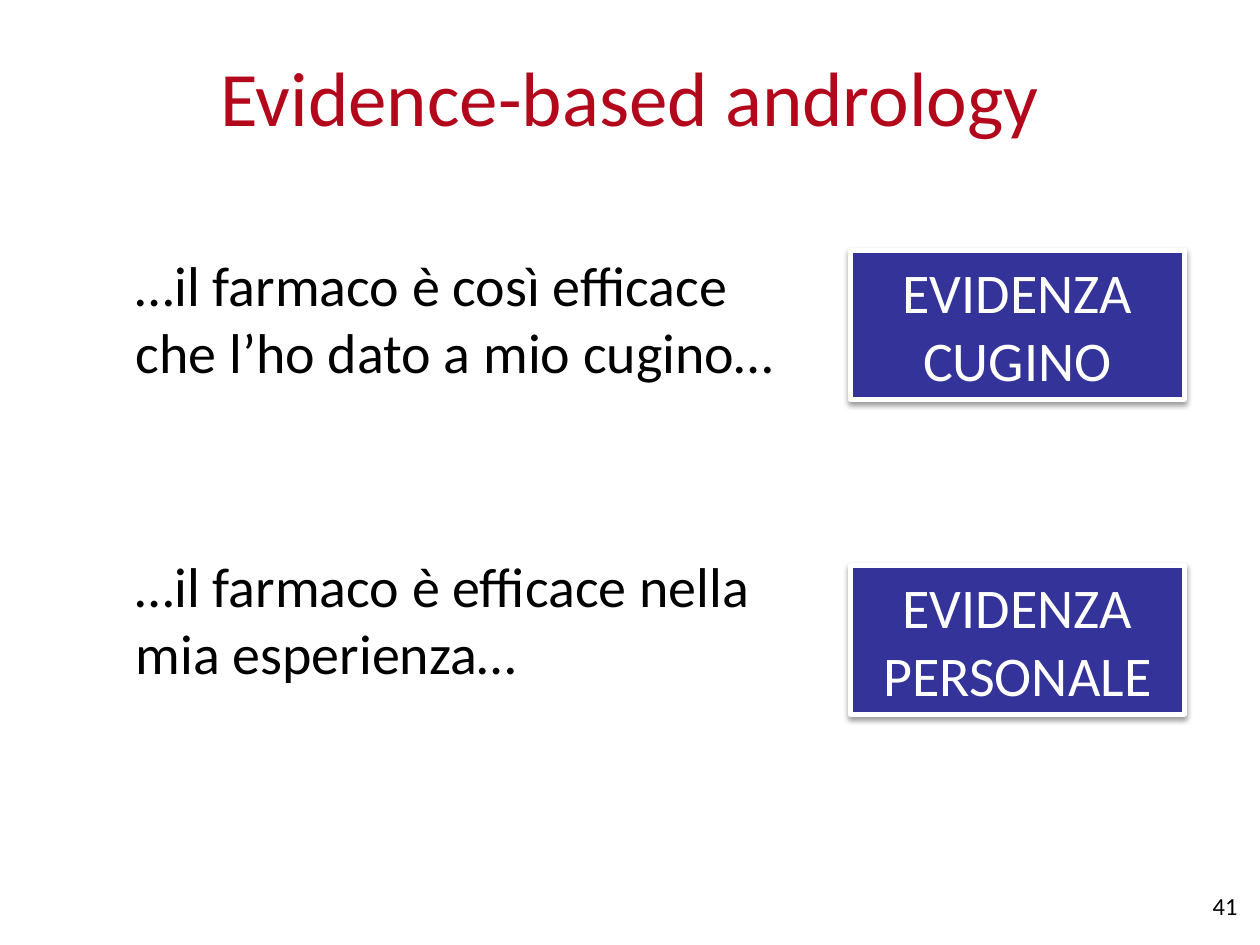
from dataclasses import dataclass

from lxml.etree import SubElement
from pptx import Presentation
from pptx.dml.color import RGBColor
from pptx.enum.shapes import MSO_SHAPE as Preset
from pptx.enum.text import MSO_ANCHOR as Anchor, PP_ALIGN as Align
from pptx.oxml.ns import qn
from pptx.shapes.autoshape import Shape
from pptx.slide import Slide
from pptx.util import Pt

COLORS = {"title": "B3071B", "text": "000000", "evidence": "333399", "white": "FFFFFF"}
FONT = "Calibri"


@dataclass
class Box:
    left: float
    top: float
    width: float
    height: float

    def bounds(self) -> tuple[Pt, Pt, Pt, Pt]:
        return Pt(self.left), Pt(self.top), Pt(self.width), Pt(self.height)


@dataclass
class TextStyle:
    size: float
    color: str
    align: Align = Align.LEFT
    anchor: Anchor = Anchor.MIDDLE
    gap: float = 0


@dataclass
class Claim:
    statement: str
    evidence: str


CLAIMS = [
    Claim("…il farmaco è così efficace che l’ho dato a mio cugino…", "EVIDENZA CUGINO"),
    Claim("…il farmaco è efficace nella mia esperienza…", "EVIDENZA PERSONALE"),
]
EVIDENCE_TOP = 143.3
EVIDENCE_PITCH = 180


def write(shape: Shape, lines: list[str], style: TextStyle) -> None:
    frame = shape.text_frame
    frame.word_wrap = True
    frame.vertical_anchor = style.anchor
    frame.text = "\n".join(lines)
    for index, paragraph in enumerate(frame.paragraphs):
        paragraph.alignment = style.align
        if index:
            paragraph.space_before = Pt(style.gap)
        paragraph.font.name = FONT
        paragraph.font.size = Pt(style.size)
        paragraph.font.color.rgb = RGBColor.from_string(COLORS[style.color])


def add_text(slide: Slide, box: Box, lines: list[str], style: TextStyle) -> None:
    write(slide.shapes.add_textbox(*box.bounds()), lines, style)


def add_shadow(shape: Shape) -> None:
    shape.shadow.inherit = False
    effects = shape.element.spPr.find(qn("a:effectLst"))
    shadow = SubElement(effects, qn("a:outerShdw"), blurRad=str(Pt(3.1)),
                        dist=str(Pt(1.6)), dir="5400000", rotWithShape="0")
    color = SubElement(shadow, qn("a:srgbClr"), val=COLORS["text"])
    SubElement(color, qn("a:alpha"), val="38000")


def add_evidence(slide: Slide, box: Box, label: str) -> None:
    evidence = slide.shapes.add_shape(Preset.RECTANGLE, *box.bounds())
    evidence.fill.solid()
    evidence.fill.fore_color.rgb = RGBColor.from_string(COLORS["evidence"])
    evidence.line.color.rgb = RGBColor.from_string(COLORS["white"])
    evidence.line.width = Pt(3)
    add_shadow(evidence)
    write(evidence, [label], TextStyle(32, "white", Align.CENTER))


def main() -> None:
    deck = Presentation()
    deck.slide_width, deck.slide_height = Pt(720), Pt(540)
    slide = deck.slides.add_slide(deck.slide_layouts[6])

    add_text(slide, Box(36, 9.4, 648, 90), ["Evidence-based andrology"],
             TextStyle(44, "title", Align.CENTER))
    add_text(slide, Box(70.5, 139.7, 394, 275), [claim.statement for claim in CLAIMS],
             TextStyle(32, "text", anchor=Anchor.TOP, gap=95))
    add_text(slide, Box(546.5, 505.5, 167.8, 24), ["41"],
             TextStyle(14, "text", Align.RIGHT))
    for row, claim in enumerate(CLAIMS):
        top = EVIDENCE_TOP + row * EVIDENCE_PITCH
        add_evidence(slide, Box(486, top, 190.8, 85), claim.evidence)

    deck.save("out.pptx")


if __name__ == "__main__":
    main()
